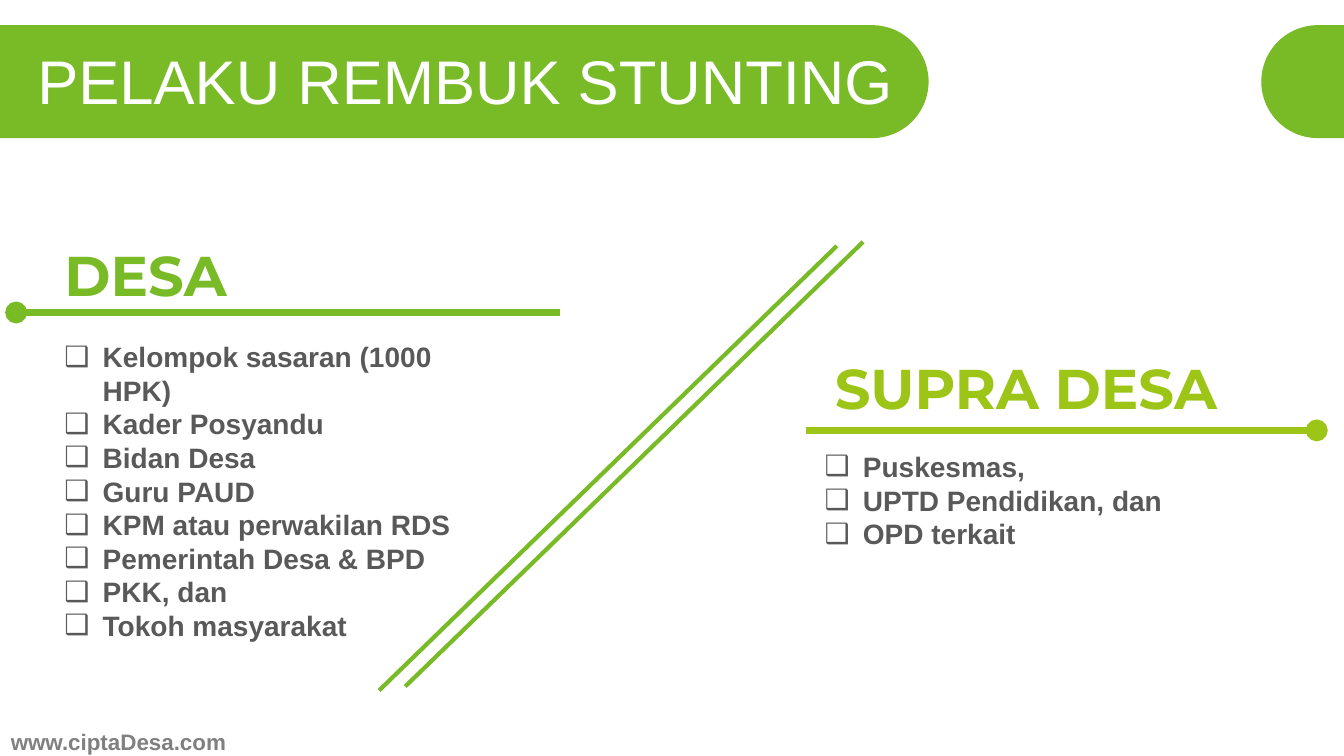
import math
from dataclasses import dataclass

from lxml import etree
from pptx import Presentation
from pptx import util as u
from pptx.dml import color
from pptx.enum import shapes, text
from pptx.oxml import ns


@dataclass(frozen=True)
class Theme:
    """Colours, fonts and type sizes of the slide."""
    green: str = "79BA27"
    lime: str = "9DC518"
    white: str = "FFFFFF"
    body: str = "595959"
    footer: str = "808080"
    sans: str = "Arial"
    display: str = "Montserrat"
    title_size: int = 44
    heading_size: int = 40
    body_size: int = 20
    footer_size: int = 16


THEME = Theme()


def inches(*lengths):
    """Turn numbers into lengths in inches."""
    return [u.Inches(length) for length in lengths]


def add_run(paragraph, words, size, font, hue, bold=True):
    """Append one formatted run to a paragraph."""
    run = paragraph.add_run()
    run.text = words
    run.font.size = u.Pt(size)
    run.font.name = font
    run.font.bold = bold
    run.font.color.rgb = color.RGBColor.from_string(hue)


def add_frame(slide, box, wrap=True, anchor=text.MSO_ANCHOR.TOP):
    """Add an empty text box and return its text frame."""
    frame = slide.shapes.add_textbox(*inches(*box)).text_frame
    frame.word_wrap = wrap
    frame.vertical_anchor = anchor
    return frame


def add_line(parent, start, end, hue, weight, dot=False):
    """Draw a straight line, with an optional dot at its end."""
    line = parent.shapes.add_connector(
        shapes.MSO_CONNECTOR.STRAIGHT, *inches(*start, *end))
    line.line.color.rgb = color.RGBColor.from_string(hue)
    line.line.width = u.Pt(weight)
    properties = line._element.spPr
    if dot:
        outline = properties.find(ns.qn("a:ln"))
        etree.SubElement(outline, ns.qn("a:tailEnd"), type="oval")
    etree.SubElement(properties, ns.qn("a:effectLst"))


def add_band(slide, box, round_right):
    """Draw a green band with one semicircular end."""
    left, top, width, height = box
    radius = height / 2
    flat, side = (left, 1) if round_right else (left + width, -1)
    centre = flat + side * (width - radius)
    angles = [math.radians(degree) for degree in range(-90, 91, 3)]
    curve = [inches(centre + side * radius * math.cos(angle),
                    top + radius + radius * math.sin(angle))
             for angle in angles]
    outline = slide.shapes.build_freeform(*inches(flat, top))
    outline.add_line_segments(
        curve + [inches(flat, top + height)], close=True)
    band = outline.convert_to_shape()
    band.shadow.inherit = False
    band.fill.solid()
    band.fill.fore_color.rgb = color.RGBColor.from_string(THEME.green)
    band.line.fill.background()


def add_header(slide, box, words):
    """Place the two bands and the title across the box."""
    left, top, width, height = box
    add_band(slide, (left, top, 9.21, height), True)
    add_band(slide, (left + width - 0.82, top, 0.82, height), False)
    title = slide.shapes.title
    title.left, title.top, title.width, title.height = inches(
        left + 0.27, top + 0.19, 12.33, 0.79)
    title._element.getparent().append(title._element)
    frame = title.text_frame
    frame.auto_size = text.MSO_AUTO_SIZE.NONE
    frame.vertical_anchor = text.MSO_ANCHOR.MIDDLE
    paragraph = frame.paragraphs[0]
    paragraph.alignment = text.PP_ALIGN.LEFT
    paragraph.line_spacing = 0.9
    add_run(paragraph, words, THEME.title_size, THEME.sans, THEME.white, False)


def add_heading(slide, box, words, hue, alignment, rule):
    """Place a group heading and its rule, given as start x, end x and y."""
    paragraph = add_frame(
        slide, box, anchor=text.MSO_ANCHOR.MIDDLE).paragraphs[0]
    paragraph.alignment = alignment
    add_run(paragraph, words, THEME.heading_size, THEME.display, hue)
    start, end, level = rule
    add_line(slide, (start, level), (end, level), hue, 5.25, dot=True)


def add_checklist(slide, box, actors):
    """List the actors with hollow box bullets."""
    frame = add_frame(slide, box)
    for index, actor in enumerate(actors):
        paragraph = frame.add_paragraph() if index else frame.paragraphs[0]
        properties = paragraph._p.get_or_add_pPr()
        properties.set("marL", str(u.Inches(0.38)))
        properties.set("indent", str(u.Inches(-0.38)))
        etree.SubElement(properties, ns.qn("a:buFont"), typeface=THEME.sans)
        etree.SubElement(properties, ns.qn("a:buChar"), char="❑")
        add_run(paragraph, actor, THEME.body_size, THEME.sans, THEME.body)


def add_divider(slide, box):
    """Draw two parallel rising diagonals inside the box."""
    left, top, width, height = box
    shift, drop = 0.26, 0.04
    divider = slide.shapes.add_group_shape()
    for step in range(2):
        start = (left + step * shift, top + height - step * drop)
        end = (left + width - (1 - step) * shift, top + (1 - step) * drop)
        add_line(divider, start, end, THEME.green, 3)


def add_footer(slide, box, words):
    """Place the web address at the foot of the slide."""
    paragraph = add_frame(slide, box, wrap=False).paragraphs[0]
    paragraph.alignment = text.PP_ALIGN.CENTER
    add_run(paragraph, words, THEME.footer_size, THEME.sans, THEME.footer)


def main():
    """Build and save the slide."""
    deck = Presentation()
    deck.slide_width, deck.slide_height = inches(13.33, 7.5)
    slide = deck.slides.add_slide(deck.slide_layouts[5])
    add_header(slide, (0, 0.25, 13.33, 1.12), "PELAKU REMBUK STUNTING")
    add_footer(slide, (-0.01, 7.17, 2.37, 0.37), "www.ciptaDesa.com")
    add_heading(slide, (0.54, 2.33, 2.46, 0.77), "DESA", THEME.green,
                text.PP_ALIGN.LEFT, (5.55, 0.16, 3.1))
    add_checklist(slide, (0.54, 3.32, 4.26, 3.13), [
        "Kelompok sasaran (1000 HPK)", "Kader Posyandu", "Bidan Desa",
        "Guru PAUD", "KPM atau perwakilan RDS", "Pemerintah Desa & BPD",
        "PKK, dan", "Tokoh masyarakat"])
    add_heading(slide, (8.08, 3.46, 4.19, 0.77), "SUPRA DESA", THEME.lime,
                text.PP_ALIGN.CENTER, (7.99, 13.06, 4.27))
    add_divider(slide, (3.76, 2.4, 4.8, 4.45))
    add_checklist(slide, (8.08, 4.41, 4.26, 1.11), [
        "Puskesmas,", "UPTD Pendidikan, dan", "OPD terkait"])
    deck.save("out.pptx")


if __name__ == "__main__":
    main()
